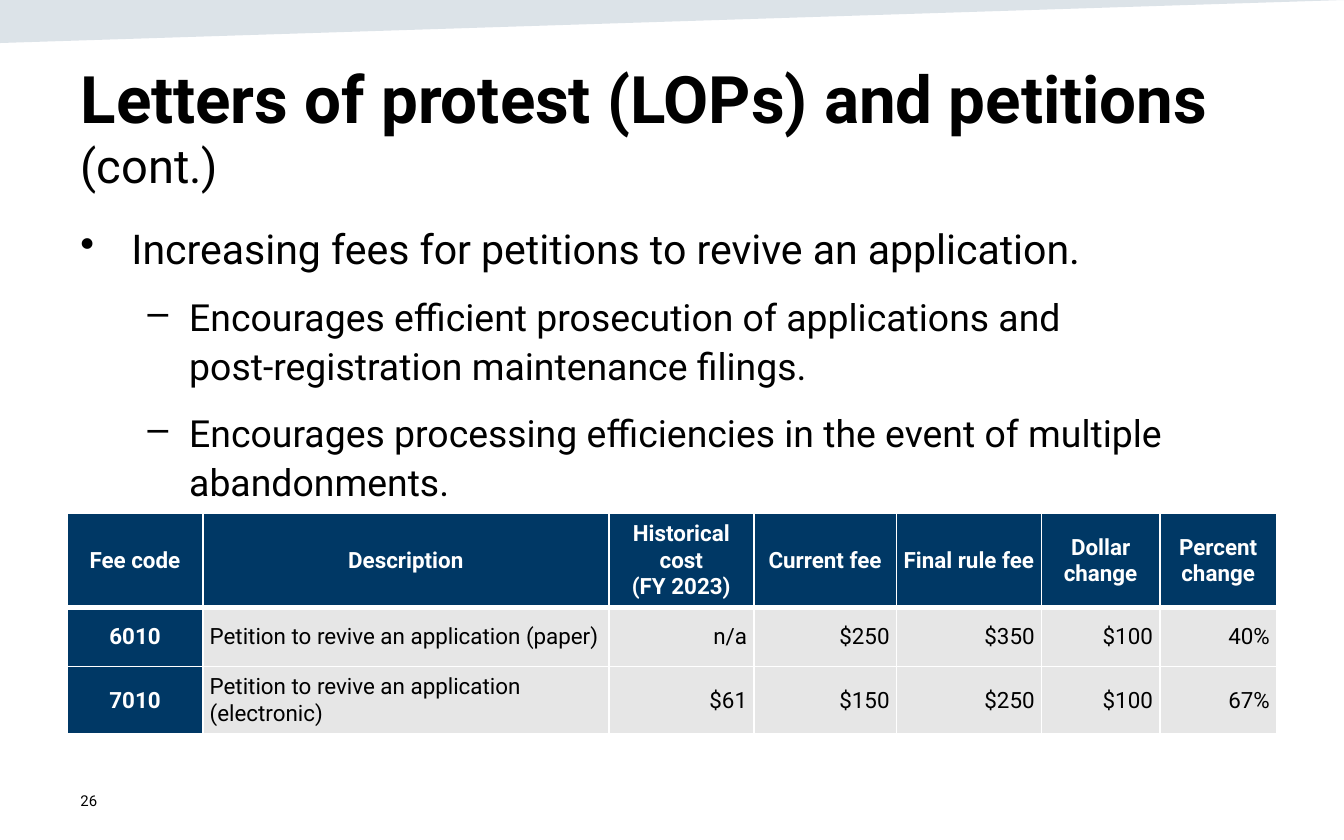
"""Build the slide on fees for petitions to revive an application."""
from lxml.etree import SubElement
from pptx import Presentation
from pptx.dml.color import RGBColor
from pptx.enum.text import MSO_ANCHOR, PP_ALIGN
from pptx.oxml.ns import qn
from pptx.util import Inches, Pt

FONT = "Roboto"
COLORS = {"text": "000000", "white": "FFFFFF", "navy": "003865",
          "gray": "E6E6E6", "band": "164469"}
BULLETS = [
    (0, "Increasing fees for petitions to revive an application."),
    (1, "Encourages efficient prosecution of applications and\vpost-registration maintenance filings."),
    (1, "Encourages processing efficiencies in the event of multiple abandonments."),
]
LEVELS = [("•", 0.38, -0.38, 22), ("–", 0.81, -0.31, 20)]
FEES = [
    ["Fee code", "Description", "Historical cost\n(FY 2023)", "Current fee",
     "Final rule fee", "Dollar change", "Percent change"],
    ["6010", "Petition to revive an application (paper)", "n/a", "$250", "$350", "$100", "40%"],
    ["7010", "Petition to revive an application (electronic)", "$61", "$150", "$250", "$100", "67%"],
]
COL_WIDTHS = [1.01, 3.02, 1.08, 1.06, 1.08, 0.88, 0.87]
ROW_HEIGHTS = [0.68, 0.44, 0.48]


def rgb(name):
    return RGBColor.from_string(COLORS[name])


def add_text(p, text, size=12, color="text", bold=False, align=PP_ALIGN.LEFT):
    """Append formatted text to a paragraph, with \\v as a line break."""
    p.alignment = align
    for i, line in enumerate(text.split("\v")):
        if i:
            p.add_line_break()
        r = p.add_run()
        r.text = line
        r.font.name, r.font.size, r.font.bold = FONT, Pt(size), bold
        r.font.color.rgb = rgb(color)


def add_box(s, left, top, width, height, anchor=MSO_ANCHOR.TOP):
    tf = s.shapes.add_textbox(*map(Inches, (left, top, width, height))).text_frame
    tf.word_wrap, tf.vertical_anchor = True, anchor
    return tf


def next_paragraph(tf, i):
    return tf.add_paragraph() if i else tf.paragraphs[0]


def add_band(s):
    fb = s.shapes.build_freeform(0, 0)
    fb.add_line_segments([(0, Inches(0.32)), (Inches(10), 0)], close=True)
    sp = fb.convert_to_shape()
    sp.shadow.inherit = False
    sp.line.fill.background()
    sp.fill.solid()
    sp.fill.fore_color.rgb = rgb("band")
    color = sp._element.spPr.find(".//" + qn("a:srgbClr"))
    SubElement(color, qn("a:alpha"), val="15000")


def add_title(s):
    sp = s.shapes.title
    sp.left, sp.top, sp.width, sp.height = map(Inches, (0.5, 0.34, 9, 0.95))
    tf = sp.text_frame
    tf.word_wrap, tf.vertical_anchor = True, MSO_ANCHOR.TOP
    tf.margin_top = Inches(0.09)
    p = tf.paragraphs[0]
    add_text(p, "Letters of protest (LOPs) and petitions", size=35.1, bold=True)
    add_text(p, " ", size=32.4, bold=True)
    add_text(p, "(cont.)", size=25.2)


def add_bullets(s):
    tf = add_box(s, 0.5, 1.58, 9, 2.24)
    for i, (level, text) in enumerate(BULLETS):
        char, margin, indent, size = LEVELS[level]
        p = next_paragraph(tf, i)
        p.level, p.line_spacing = level, 1.1
        p.space_before = Pt(9 if i else 0)
        pPr = p._p.get_or_add_pPr()
        pPr.set("marL", str(Inches(margin)))
        pPr.set("indent", str(Inches(indent)))
        SubElement(pPr, qn("a:buChar"), char=char)
        add_text(p, text, size=size)


def set_borders(cell, **widths):
    """Draw white cell borders, 1 pt unless a side is given."""
    tcPr = cell._tc.get_or_add_tcPr()
    for side in "LRTB":
        ln = SubElement(tcPr, qn(f"a:ln{side}"), w=str(Pt(widths.get(side, 1))))
        SubElement(SubElement(ln, qn("a:solidFill")), qn("a:srgbClr"), val=COLORS["white"])


def fill_cell(cell, text, row, col):
    """Format one cell by its place in the table."""
    header = row == 0 or col == 0
    set_borders(cell, B=1 if row else 3, T=3 if row == 1 else 1)
    cell.fill.solid()
    cell.fill.fore_color.rgb = rgb("navy" if header else "gray")
    cell.vertical_anchor = MSO_ANCHOR.MIDDLE
    cell.margin_left = cell.margin_right = Inches(0.05)
    cell.margin_top = cell.margin_bottom = Inches(0.05)
    align = PP_ALIGN.CENTER if header else PP_ALIGN.LEFT if col == 1 else PP_ALIGN.RIGHT
    for i, line in enumerate(text.split("\n")):
        add_text(next_paragraph(cell.text_frame, i), line, bold=header, align=align,
                 color="white" if header else "text")


def add_fee_table(s):
    table = s.shapes.add_table(len(FEES), len(COL_WIDTHS), *map(
        Inches, (0.5, 3.82, sum(COL_WIDTHS), sum(ROW_HEIGHTS)))).table
    for column, width in zip(table.columns, COL_WIDTHS):
        column.width = Inches(width)
    for row, (height, texts) in enumerate(zip(ROW_HEIGHTS, FEES)):
        table.rows[row].height = Inches(height)
        for col, text in enumerate(texts):
            fill_cell(table.cell(row, col), text, row, col)


def main():
    prs = Presentation()
    prs.slide_width, prs.slide_height = Inches(10), Inches(6.25)
    s = prs.slides.add_slide(prs.slide_layouts[5])
    add_band(s)
    add_title(s)
    add_bullets(s)
    add_fee_table(s)
    tf = add_box(s, 0.5, 5.79, 2.25, 0.33, MSO_ANCHOR.MIDDLE)
    add_text(tf.paragraphs[0], "26", size=8)
    prs.save("out.pptx")


if __name__ == "__main__":
    main()
